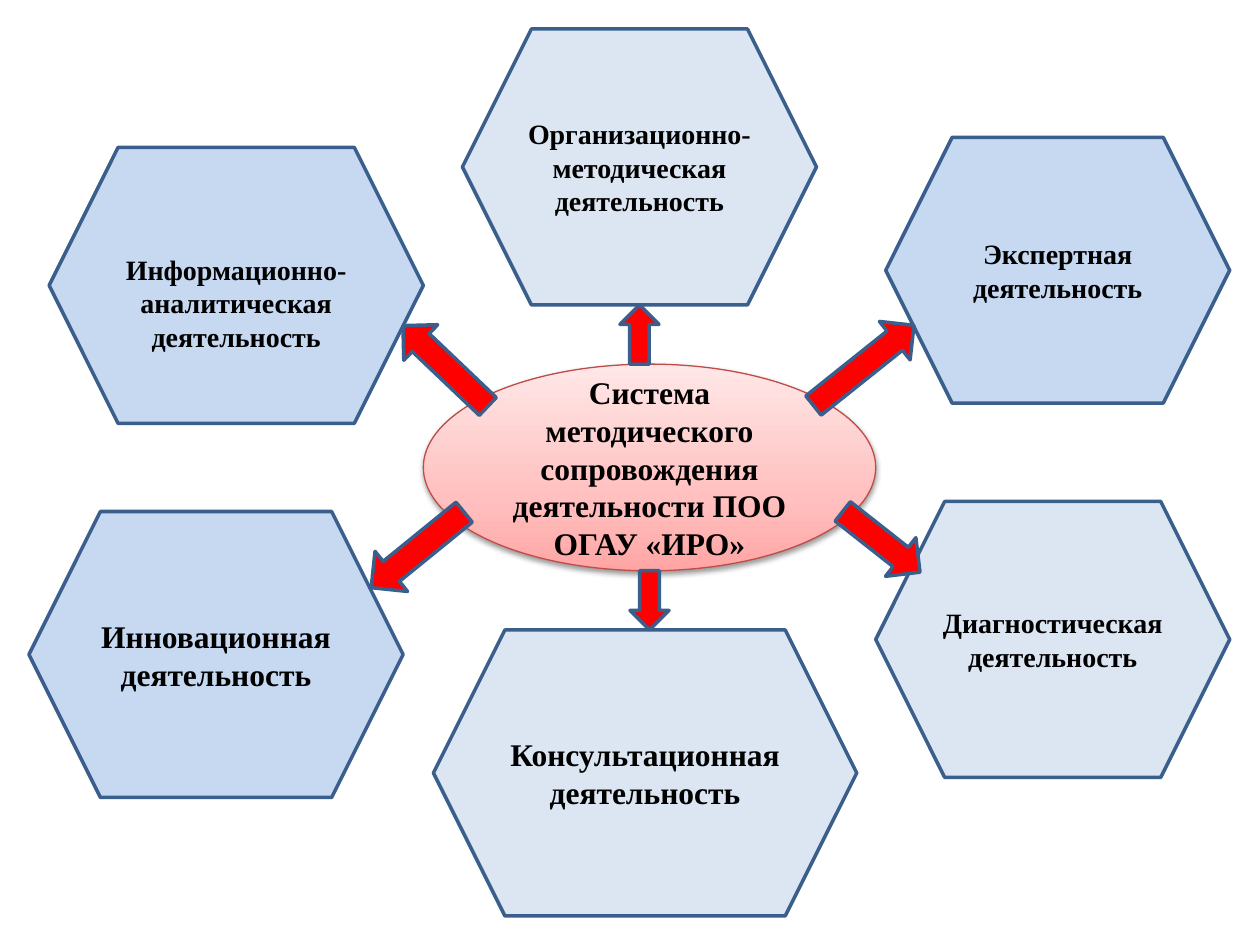
from lxml import etree
from pptx import Presentation
from pptx.dml.color import RGBColor
from pptx.enum.shapes import MSO_SHAPE
from pptx.enum.text import MSO_ANCHOR, PP_ALIGN
from pptx.oxml import parse_xml
from pptx.oxml.ns import qn
from pptx.util import Inches, Pt

HEXAGON, ELLIPSE = MSO_SHAPE.HEXAGON, MSO_SHAPE.OVAL
UP, DOWN = MSO_SHAPE.UP_ARROW, MSO_SHAPE.DOWN_ARROW
CENTER, MIDDLE = PP_ALIGN.CENTER, MSO_ANCHOR.MIDDLE
DRAWING_NS = "http://schemas.openxmlformats.org/drawingml/2006/main"

FONT = "Times New Roman"
BLUE, PALE, OUTLINE, RED = "C6D9F1", "DCE6F2", "3A5F8C", "FF0000"
CENTER_STOPS = [(0, "FFA6A5"), (35, "FFC0BF"), (100, "FFE7E7")]

# box, fill, text size, paragraphs, extra top inset
ACTIVITIES = [
    ((0.39, 1.17, 2.97, 2.19), BLUE, 16, ["Информационно-аналитическая деятельность"], 0.27),
    ((0.23, 4.06, 2.97, 2.27), BLUE, 18, ["Инновационная деятельность"], 0),
    ((3.67, 0.23, 2.81, 2.19), PALE, 16, ["Организационно-методическая", "деятельность"], 0),
    ((3.44, 5, 3.36, 2.27), PALE, 18, ["Консультационная", "деятельность"], 0),
    ((7.03, 1.09, 2.73, 2.11), BLUE, 16, ["Экспертная деятельность"], 0),
    ((6.95, 3.98, 2.81, 2.19), PALE, 16, ["Диагностическая деятельность"], 0),
]

# kind, box, rotation
ARROWS = [
    (UP, (4.92, 2.42, 0.31, 0.47), 0),
    (DOWN, (5, 4.53, 0.31, 0.47), 0),
    (UP, (3.34, 2.44, 0.39, 0.93), 313.6),
    (DOWN, (3.11, 3.89, 0.41, 0.95), 50.9),
    (UP, (6.66, 2.39, 0.39, 1.02), 51.4),
    (UP, (6.8, 3.91, 0.39, 0.78), 128.2),
]


def color(value):
    return RGBColor.from_string(value)


def add_shape(slide, kind, box, fill, line=OUTLINE, width=2):
    shape = slide.shapes.add_shape(kind, *(Inches(length) for length in box))
    shape.shadow.inherit = False
    shape.fill.solid()
    shape.fill.fore_color.rgb = color(fill)
    shape.line.color.rgb = color(line)
    shape.line.width = Pt(width)
    return shape


def write_text(shape, lines, size):
    frame = shape.text_frame
    frame.word_wrap = True
    frame.vertical_anchor = MIDDLE
    frame.text = "\n".join(lines)
    for paragraph in frame.paragraphs:
        paragraph.alignment = CENTER
        font = paragraph.font
        font.name, font.size, font.bold = FONT, Pt(size), True
        font.color.rgb = color("000000")


def add_activity(slide, box, fill, size, lines, extra_top):
    hexagon = add_shape(slide, HEXAGON, box, fill)
    write_text(hexagon, lines, size)
    hexagon.text_frame.margin_top = Inches(0.05 + extra_top)


def add_center(slide, box):
    ellipse = add_shape(slide, ELLIPSE, box, CENTER_STOPS[0][1], "BF4C48", 0.75)
    write_text(ellipse, ["Система методического сопровождения деятельности ПОО ОГАУ «ИРО»"], 18)
    properties = ellipse._element.spPr

    # Three-stop gradient running upwards
    stops = "".join(
        f'<a:gs pos="{position * 1000}"><a:srgbClr val="{value}"/></a:gs>'
        for position, value in CENTER_STOPS
    )
    gradient = parse_xml(
        f'<a:gradFill xmlns:a="{DRAWING_NS}" rotWithShape="1"><a:gsLst>{stops}</a:gsLst>'
        '<a:lin ang="16200000" scaled="1"/></a:gradFill>'
    )
    properties.replace(properties.find(qn("a:solidFill")), gradient)

    # Soft shadow below
    shadow = etree.SubElement(
        properties.find(qn("a:effectLst")), qn("a:outerShdw"),
        blurRad=str(Pt(3.1)), dist=str(Pt(1.6)), dir="5400000", rotWithShape="0",
    )
    tint = etree.SubElement(shadow, qn("a:srgbClr"), val="000000")
    etree.SubElement(tint, qn("a:alpha"), val="38000")


def add_arrow(slide, kind, box, rotation):
    arrow = add_shape(slide, kind, box, RED)
    arrow.rotation = rotation


def main():
    deck = Presentation()
    deck.slide_width, deck.slide_height = Inches(10), Inches(7.5)
    slide = deck.slides.add_slide(deck.slide_layouts[6])
    for activity in ACTIVITIES:
        add_activity(slide, *activity)
    add_center(slide, (3.36, 2.89, 3.59, 1.64))
    for arrow in ARROWS:
        add_arrow(slide, *arrow)
    deck.save("out.pptx")


if __name__ == "__main__":
    main()
